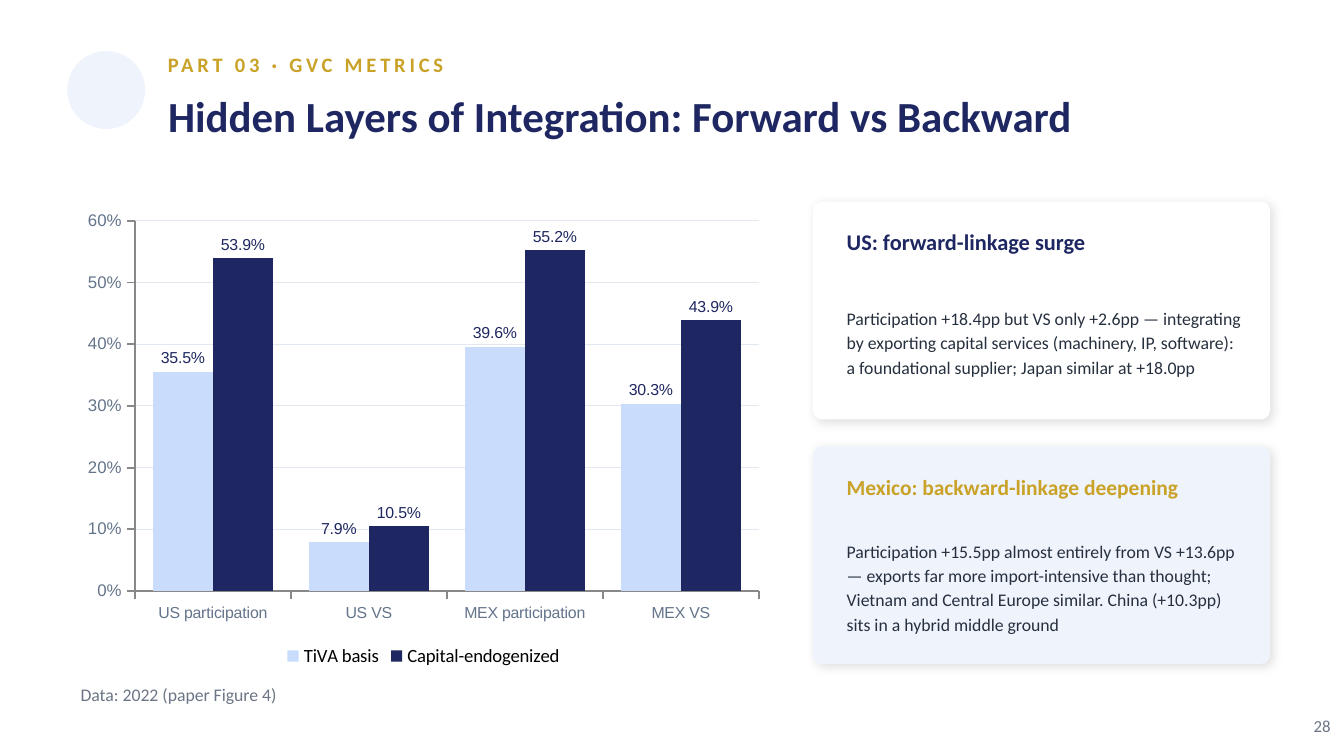
from pptx import Presentation
from pptx.chart.data import CategoryChartData
from pptx.dml.color import RGBColor
from pptx.enum.chart import (XL_CHART_TYPE, XL_LABEL_POSITION, XL_LEGEND_POSITION,
                             XL_TICK_LABEL_POSITION, XL_TICK_MARK)
from pptx.enum.shapes import MSO_SHAPE
from pptx.enum.text import MSO_ANCHOR, MSO_AUTO_SIZE, PP_ALIGN
from pptx.oxml import parse_xml
from pptx.oxml.ns import nsdecls
from pptx.util import Inches, Pt

NAVY = RGBColor(0x1E, 0x27, 0x61)
GOLD = RGBColor(0xC9, 0xA2, 0x27)
WHITE = RGBColor(0xFF, 0xFF, 0xFF)
BLACK = RGBColor(0x00, 0x00, 0x00)
PALE_BLUE = RGBColor(0xEE, 0xF3, 0xFC)
LIGHT_BLUE = RGBColor(0xCA, 0xDC, 0xFC)
GRAY = RGBColor(0x6B, 0x75, 0x85)
INK = RGBColor(0x26, 0x30, 0x3E)
AXIS_TEXT = RGBColor(0x64, 0x74, 0x8B)
AXIS_LINE = RGBColor(0x88, 0x88, 0x88)
GRID = RGBColor(0xE2, 0xE8, 0xF0)

CATEGORIES = ["US participation", "US VS", "MEX participation", "MEX VS"]
SERIES = [
    ("TiVA basis", [35.5, 7.9, 39.6, 30.3], LIGHT_BLUE),
    ("Capital-endogenized", [53.9, 10.5, 55.2, 43.9], NAVY),
]
# heading, heading size, heading colour, card fill, body
CARDS = [
    ("US: forward-linkage surge", 12, NAVY, WHITE,
     "Participation +18.4pp but VS only +2.6pp — integrating by exporting capital "
     "services (machinery, IP, software): a foundational supplier; Japan similar at +18.0pp"),
    ("Mexico: backward-linkage deepening", 11.5, GOLD, PALE_BLUE,
     "Participation +15.5pp almost entirely from VS +13.6pp — exports far more "
     "import-intensive than thought; Vietnam and Central Europe similar. "
     "China (+10.3pp) sits in a hybrid middle ground"),
]
CARD_TOP, CARD_STEP = 1.5, 1.82


def set_font(font, size, color, bold=False, name="Calibri"):
    font.name = name
    font.size = Pt(size)
    font.bold = bold
    font.color.rgb = color


def fill_text(shape, text, size, color, bold=False, align=PP_ALIGN.LEFT):
    frame = shape.text_frame
    frame.text = text
    frame.word_wrap = True
    frame.auto_size = MSO_AUTO_SIZE.NONE
    frame.vertical_anchor = MSO_ANCHOR.MIDDLE
    frame.margin_left = frame.margin_right = frame.margin_top = frame.margin_bottom = 0
    paragraph = frame.paragraphs[0]
    paragraph.alignment = align
    set_font(paragraph.runs[0].font, size, color, bold)
    return paragraph


def add_text(slide, left, top, width, height, text, size, color, **style):
    box = slide.shapes.add_textbox(Inches(left), Inches(top), Inches(width), Inches(height))
    return fill_text(box, text, size, color, **style)


def add_filled_shape(slide, kind, left, top, width, height, color):
    shape = slide.shapes.add_shape(kind, Inches(left), Inches(top), Inches(width), Inches(height))
    shape.shadow.inherit = False
    shape.fill.solid()
    shape.fill.fore_color.rgb = color
    shape.line.fill.background()
    return shape


def add_soft_shadow(shape):
    effects = shape._element.spPr.find("{*}effectLst")
    effects.append(parse_xml(
        f'<a:outerShdw {nsdecls("a")} blurRad="{Pt(6)}" dist="{Pt(2)}" dir="{45 * 60000}" '
        'algn="bl" rotWithShape="0"><a:srgbClr val="000000"><a:alpha val="13000"/>'
        '</a:srgbClr></a:outerShdw>'))


def add_header(slide):
    add_filled_shape(slide, MSO_SHAPE.OVAL, 0.5, 0.38, 0.58, 0.58, PALE_BLUE)
    kicker = add_text(slide, 1.25, 0.34, 8, 0.28, "PART 03 · GVC METRICS", 11, GOLD, bold=True)
    kicker.runs[0].font._element.set("spc", "200")
    title = slide.shapes.title
    title.left, title.top = Inches(1.25), Inches(0.58)
    title.width, title.height = Inches(8.3), Inches(0.55)
    fill_text(title, "Hidden Layers of Integration: Forward vs Backward", 23, NAVY, bold=True)


def format_axis(axis, size):
    set_font(axis.tick_labels.font, size, AXIS_TEXT, name="Arial")
    axis.major_tick_mark = XL_TICK_MARK.OUTSIDE
    axis.minor_tick_mark = XL_TICK_MARK.NONE
    axis.format.line.color.rgb = AXIS_LINE
    axis.format.line.width = Pt(1)


def add_participation_chart(slide):
    data = CategoryChartData()
    data.categories = CATEGORIES
    for name, values, _ in SERIES:
        data.add_series(name, values)
    chart = slide.shapes.add_chart(XL_CHART_TYPE.COLUMN_CLUSTERED, Inches(0.55), Inches(1.5),
                                   Inches(5.2), Inches(3.5), data).chart
    set_font(chart.font, 10, BLACK)
    chart.has_title = False
    chart.has_legend = True
    chart.legend.position = XL_LEGEND_POSITION.BOTTOM
    chart.legend.include_in_layout = False
    set_font(chart.legend.font, 10, BLACK)

    # Axes
    format_axis(chart.category_axis, 8.5)
    chart.category_axis.tick_label_position = XL_TICK_LABEL_POSITION.LOW
    value_axis = chart.value_axis
    format_axis(value_axis, 9)
    value_axis.minimum_scale, value_axis.maximum_scale = 0, 60
    value_axis.major_unit = 10
    value_axis.tick_labels.number_format = '0"%"'
    value_axis.tick_labels.number_format_is_linked = False
    value_axis.major_gridlines.format.line.color.rgb = GRID
    value_axis.major_gridlines.format.line.width = Pt(0.5)

    # Columns and their labels
    plot = chart.plots[0]
    plot.gap_width, plot.overlap = 60, 0
    plot.vary_by_categories = False
    for series, (_, _, color) in zip(plot.series, SERIES):
        series.format.fill.solid()
        series.format.fill.fore_color.rgb = color
        labels = series.data_labels
        labels.show_value = True
        labels.number_format = '0.0"%"'
        labels.number_format_is_linked = False
        labels.position = XL_LABEL_POSITION.OUTSIDE_END
        set_font(labels.font, 8.5, NAVY, name="Arial")


def add_card(slide, top, heading, heading_size, heading_color, fill, body):
    card = add_filled_shape(slide, MSO_SHAPE.ROUNDED_RECTANGLE, 6.05, top, 3.4, 1.62, fill)
    card.adjustments[0] = 0.04
    add_soft_shadow(card)
    add_text(slide, 6.3, top + 0.14, 3, 0.32, heading, heading_size, heading_color, bold=True)
    paragraph = add_text(slide, 6.3, top + 0.5, 2.95, 1.08, body, 9.5, INK)
    paragraph.line_spacing = Pt(13)


def main():
    presentation = Presentation()
    # Widescreen, 16:9
    presentation.slide_width = Inches(10)
    presentation.slide_height = Inches(10) * 9 // 16
    slide = presentation.slides.add_slide(presentation.slide_layouts[5])

    add_header(slide)
    add_participation_chart(slide)
    add_text(slide, 0.6, 5.02, 4.5, 0.3, "Data: 2022 (paper Figure 4)", 9.5, GRAY)
    for index, card in enumerate(CARDS):
        add_card(slide, CARD_TOP + index * CARD_STEP, *card)

    # Page number
    add_text(slide, 9.45, 5.25, 0.45, 0.3, "28", 9, GRAY, align=PP_ALIGN.RIGHT)
    presentation.save("out.pptx")


if __name__ == "__main__":
    main()
